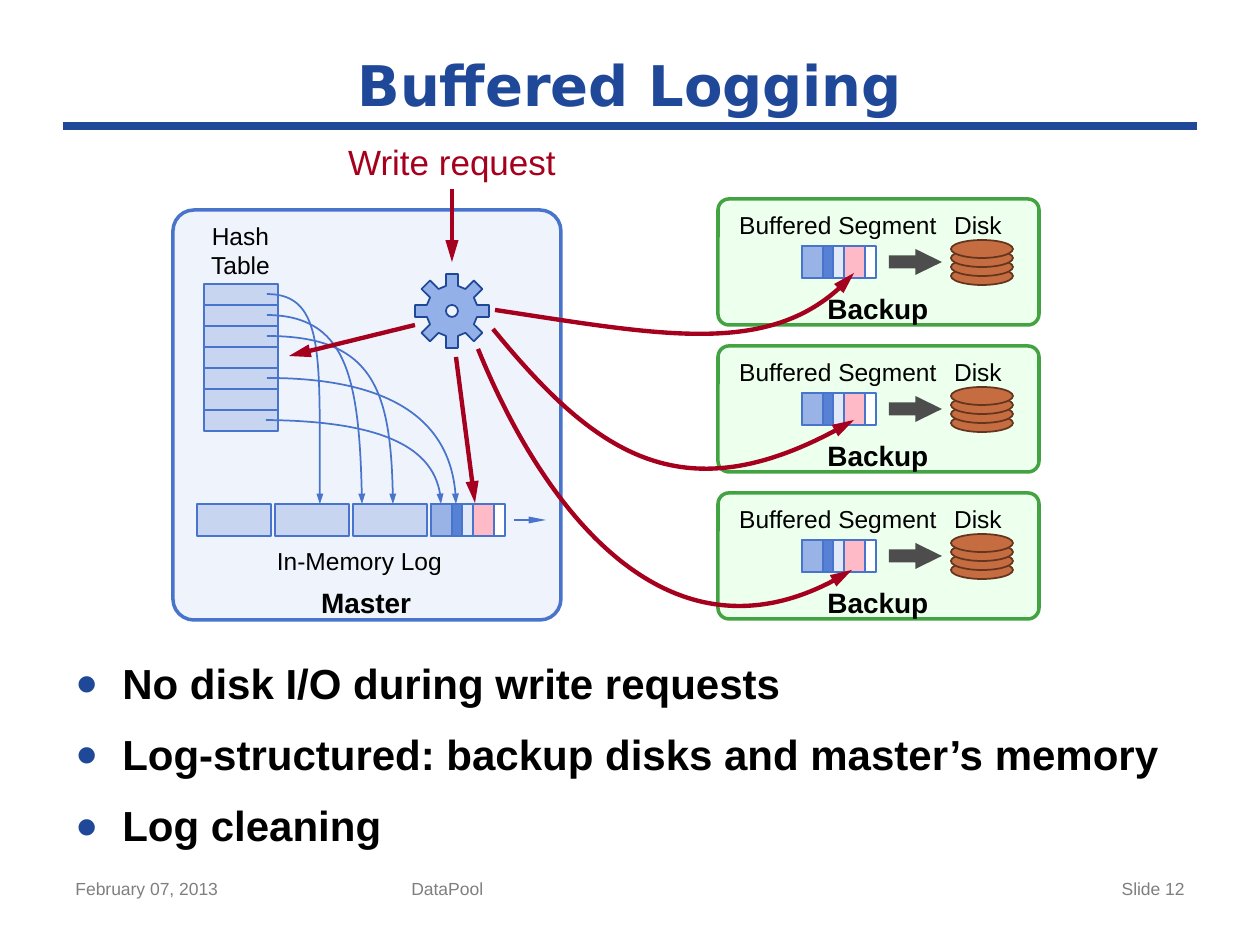
import math

from lxml import etree
from pptx import Presentation
from pptx import util as u
from pptx.dml.color import RGBColor
from pptx.enum import shapes, text
from pptx.oxml.ns import qn

PX = 914400 / 126
NAVY, BLUE, RED, GREEN = "1F4899", "4974CB", "A5001E", "43A343"
PALE, LIGHT, BLACK, GREY = "EFF3FB", "C7D5F1", "000000", "7F7F7F"
LEFT, CENTER, RIGHT = (text.PP_ALIGN.LEFT, text.PP_ALIGN.CENTER,
                       text.PP_ALIGN.RIGHT)
KIND = shapes.MSO_SHAPE
# Arrowheads: width and length
SLIM, SLIM_LONG, LONG = ("sm", "med"), ("sm", "lg"), ("med", "lg")
rgb = RGBColor.from_string


def style(shape, fill=None, line=None, width=1.5, arrow=None):
    """Set fill, outline and arrowhead, and remove the theme shadow."""
    if hasattr(shape, "fill"):
        shape.shadow.inherit = False
        if fill:
            shape.fill.solid()
            shape.fill.fore_color.rgb = rgb(fill)
        else:
            shape.fill.background()
    if line:
        shape.line.color.rgb = rgb(line)
        shape.line.width = u.Pt(width)
    else:
        shape.line.fill.background()
    properties = shape.element.spPr
    if arrow:
        etree.SubElement(properties.find(qn("a:ln")), qn("a:tailEnd"),
                         type="triangle", w=arrow[0], len=arrow[1])
    if not hasattr(shape, "fill"):
        etree.SubElement(properties, qn("a:effectLst"))


def write(para, words, size, color, bold=False, align=CENTER, font="Arial"):
    para.text = words
    para.alignment = align
    for span in para.runs:
        for name, value in {"size": u.Pt(size), "bold": bold, "name": font}.items():
            setattr(span.font, name, value)
        span.font.color.rgb = rgb(color)


deck = Presentation()
deck.slide_width, deck.slide_height = u.Inches(10), u.Inches(7.5)
page = deck.slides.add_slide(deck.slide_layouts[5])

# Title
title = page.shapes.title
title_place = {"left": 63, "top": 42, "width": 1134, "height": 84}
for name, value in title_place.items():
    setattr(title, name, round(value * PX))
title.text_frame.vertical_anchor = text.MSO_ANCHOR.MIDDLE
write(title.text_frame.paragraphs[0], "Buffered Logging", 32, NAVY, True,
      font="DejaVu Sans")

# Boxes: kind, left, top, width, height, fill, line, line width, adjustments
boxes = [(KIND.ROUNDED_RECTANGLE, 173, 210, 388, 410, PALE, BLUE, 2, [0.054]),
         (KIND.RECTANGLE, 204, 284, 74, 147, LIGHT, BLUE, 1.5, [])]
# Lines: x1, y1, x2, y2, color, width, arrow
lines = [(63, 126, 1197, 126, NAVY, 4.5, None)]
lines += [(204, 284 + 21 * row, 278, 284 + 21 * row, BLUE, 1.5, None)
          for row in range(1, 7)]
# Labels: words, left, top, width, height, size, bold
labels = [("Master", 319, 586, 94, 34, 16, True),
          ("In-Memory Log", 270, 546, 179, 30, 14, False),
          ("Hash\vTable", 204, 221, 73, 59, 14, False)]
segments = [(431, 504)]

for top in (199, 346, 493):
    boxes.append((KIND.ROUNDED_RECTANGLE, 718, top, 321, 126, "EDFFED", GREEN, 2, [0.087]))
    boxes += [(KIND.OVAL, 951, top + rise, 62, 18, "C56D41", "64351E", 1, [])
              for rise in (68, 59, 50, 41)]
    boxes.append((KIND.RIGHT_ARROW, 889, top + 50, 53, 26, "4D4D4D", None, 0, [0.5, 1.02]))
    lines.append((802, top + 47, 802, top + 79, BLUE, 1.5, None))
    labels += [("Disk", 954, top + 11, 48, 30, 14, False),
               ("Backup", 827, top + 93, 102, 34, 16, True),
               ("Buffered Segment", 737, top + 11, 202, 30, 14, False)]
    segments.append((802, top + 47))

for left, top in segments:
    for offset, width, fill in ((0, 74, "FFFFFF"), (0, 21, "9AB3E6"), (21, 10, "5781D5"),
                                (31, 11, "E1E8F7"), (42, 21, "FFBAC7")):
        boxes.append((KIND.RECTANGLE, left + offset, top, width, 32, fill, BLUE, 1.5, []))
boxes += [(KIND.RECTANGLE, 197 + 78 * block, 504, 74, 32, LIGHT, BLUE, 1.5, [])
          for block in range(3)]

lines += [(514, 520, 546, 520, BLUE, 1.5, SLIM_LONG),
          (452, 189, 452, 262, RED, 2.5, LONG),
          (415, 325, 289, 356, RED, 2.5, LONG),
          (456, 357, 475, 503, RED, 2.5, LONG)]

for kind, left, top, width, height, fill, line, weight, adjustments in boxes:
    box = page.shapes.add_shape(kind, *(round(v * PX) for v in (left, top, width, height)))
    for index, value in enumerate(adjustments):
        box.adjustments[index] = value
    style(box, fill, line, weight)

for words, left, top, width, height, size, bold in labels:
    box = page.shapes.add_textbox(*(round(v * PX) for v in (left, top, width, height)))
    frame = box.text_frame
    for side in ("left", "top", "right", "bottom"):
        setattr(frame, f"margin_{side}", 0)
    frame.word_wrap = "\v" in words
    frame.auto_size = text.MSO_AUTO_SIZE.SHAPE_TO_FIT_TEXT
    write(frame.paragraphs[0], words, size, BLACK, bold)

# Gear with eight teeth and a hub
gear_x, gear_y = 452, 311
outline = []
for tooth in range(8):
    turn = math.radians(45 * tooth)
    for x, y in ((-6, -25), (-6, -37), (6, -37), (6, -25)):
        outline.append(((gear_x + x * math.cos(turn) - y * math.sin(turn)) * PX,
                        (gear_y + x * math.sin(turn) + y * math.cos(turn)) * PX))
builder = page.shapes.build_freeform(*outline[0])
builder.add_line_segments(outline[1:], close=True)
style(builder.convert_to_shape(), "94B0E8", NAVY, 1)
hub = page.shapes.add_shape(
    KIND.OVAL, *(round(v * PX) for v in (gear_x - 6, gear_y - 6, 12, 12)))
style(hub, PALE, NAVY, 1)

# Curved arrows: color, width, arrowhead and four Bézier points
curves = [
    (BLUE, 1, SLIM, (266, 420), (375, 421), (440, 447), (441, 504)),
    (BLUE, 1, SLIM, (267, 294), (326, 294), (319, 362), (320, 504)),
    (BLUE, 1, SLIM, (267, 336), (372, 336), (392, 391), (393, 504)),
    (BLUE, 1, SLIM, (267, 378), (386, 378), (455, 420), (456, 504)),
    (BLUE, 1, SLIM, (267, 315), (345, 316), (360, 377), (362, 504)),
    (RED, 2.5, LONG, (495, 310), (659, 335), (780, 359), (854, 273)),
    (RED, 2.5, LONG, (493, 329), (595, 454), (688, 518), (854, 420)),
    (RED, 2.5, LONG, (478, 349), (541, 504), (672, 683), (852, 570)),
]
STEPS = 32
for color, width, arrow, *controls in curves:
    # Sampled points give the frame; the Bézier segment then replaces them
    points = []
    for step in range(STEPS + 1):
        t = step / STEPS
        weights = [math.comb(3, k) * t**k * (1 - t)**(3 - k) for k in range(4)]
        points.append([PX * sum(w * point[axis] for w, point in zip(weights, controls))
                       for axis in (0, 1)])
    builder = page.shapes.build_freeform(*points[0])
    builder.add_line_segments(points[1:], close=False)
    curve = builder.convert_to_shape()
    outline = next(curve.element.iter(qn("a:path")))
    for segment in outline.findall(qn("a:lnTo")):
        outline.remove(segment)
    bezier = etree.SubElement(outline, qn("a:cubicBezTo"))
    for x, y in controls[1:]:
        etree.SubElement(bezier, qn("a:pt"), x=str(round(x * PX) - curve.left),
                         y=str(round(y * PX) - curve.top))
    style(curve, None, color, width, arrow)

for *ends, color, width, arrow in lines:
    connector = page.shapes.add_connector(
        shapes.MSO_CONNECTOR.STRAIGHT, *(round(v * PX) for v in ends))
    style(connector, None, color, width, arrow)

# Request caption and footer
for words, left, top, width, height, size, color, align in (
        ("Write request", 335, 134, 234, 55, 20, RED, CENTER),
        ("February 07, 2013", 63, 872, 294, 54, 10, GREY, LEFT),
        ("DataPool", 399, 872, 473, 54, 10, GREY, LEFT),
        ("Slide 12", 903, 872, 294, 54, 10, GREY, RIGHT)):
    box = page.shapes.add_textbox(*(round(v * PX) for v in (left, top, width, height)))
    box.text_frame.word_wrap = True
    write(box.text_frame.paragraphs[0], words, size, color, align=align)

# Bullets
body = page.shapes.add_textbox(*(round(v * PX) for v in (63, 651, 1134, 273)))
body.text_frame.word_wrap = True
for index, words in enumerate(("No disk I/O during write requests",
                               "Log-structured: backup disks and master’s memory",
                               "Log cleaning")):
    para = body.text_frame.paragraphs[0] if index == 0 else body.text_frame.add_paragraph()
    write(para, words, 24, BLACK, True, LEFT)
    para.space_before = u.Pt(12)
    settings = para._p.get_or_add_pPr()
    indent = round(47 * PX)
    settings.set("marL", str(indent))
    settings.set("indent", str(-indent))
    bullet_color = etree.SubElement(settings, qn("a:buClr"))
    etree.SubElement(bullet_color, qn("a:srgbClr"), val=NAVY)
    etree.SubElement(settings, qn("a:buSzPct"), val="90000")
    etree.SubElement(settings, qn("a:buFont"), typeface="Arial")
    etree.SubElement(settings, qn("a:buChar"), char="●")

deck.save("out.pptx")
